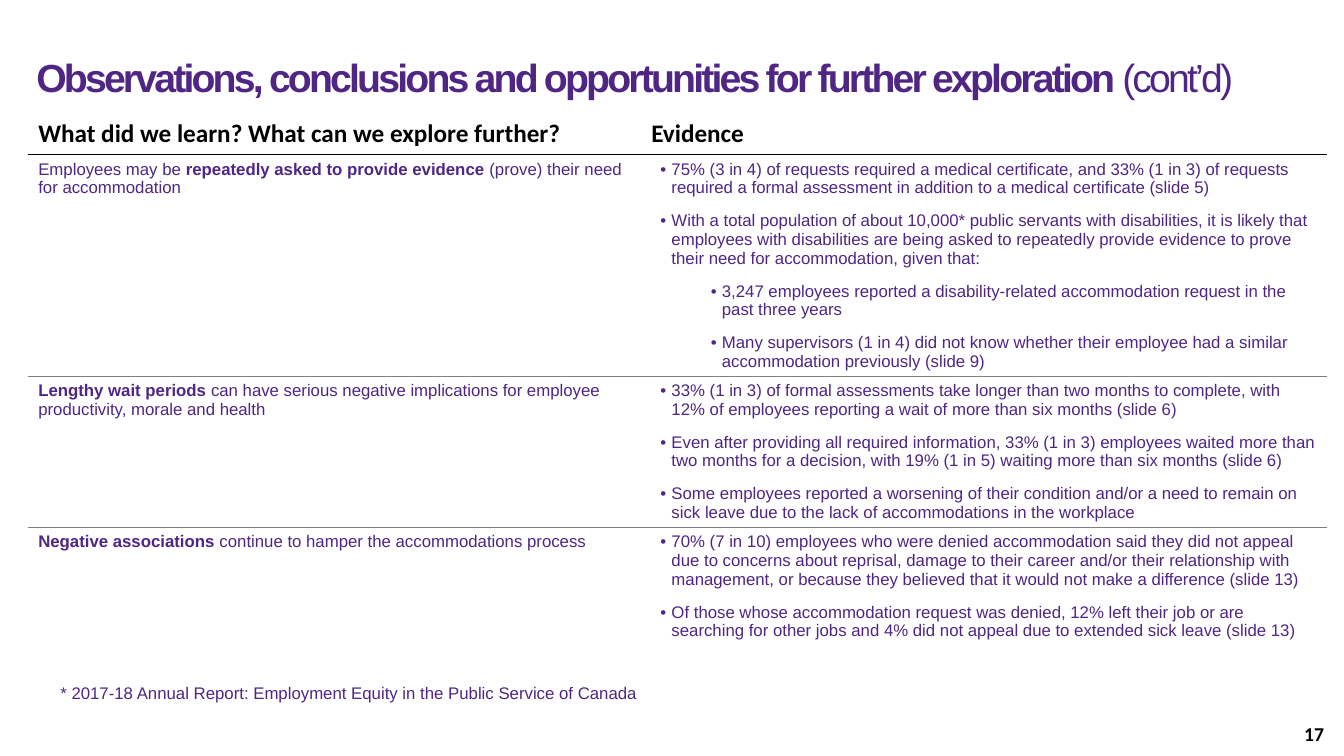
from lxml import etree
from pptx import Presentation
from pptx.dml.color import RGBColor
from pptx.enum.text import MSO_ANCHOR, PP_ALIGN
from pptx.oxml.ns import qn
from pptx.util import Inches, Pt

TOP, MIDDLE = MSO_ANCHOR.TOP, MSO_ANCHOR.MIDDLE
LEFT, RIGHT = PP_ALIGN.LEFT, PP_ALIGN.RIGHT
COLORS = {"purple": "4F2684", "black": "000000", "gray": "808080"}
NO_STYLE = "{2D5ABB26-0587-4C30-8999-92F81FD0307C}"

TITLE = [("Observations, conclusions and opportunities for further exploration ", True), ("(cont’d)", False)]
HEADERS = ["What did we learn? What can we explore further?", "Evidence"]
FINDINGS = [
    (
        [("Employees may be ", False), ("repeatedly asked to provide evidence", True),
         (" (prove) their need for accommodation", False)],
        [
            (0, "75% (3 in 4) of requests required a medical certificate, and 33% (1 in 3) of requests required a formal assessment in addition to a medical certificate (slide 5)"),
            (0, "With a total population of about 10,000* public servants with disabilities, it is likely that employees with disabilities are being asked to repeatedly provide evidence to prove their need for accommodation, given that:"),
            (1, "3,247 employees reported a disability-related accommodation request in the past three years"),
            (1, "Many supervisors (1 in 4) did not know whether their employee had a similar accommodation previously (slide 9)"),
        ],
    ),
    (
        [("Lengthy wait periods ", True),
         ("can have serious negative implications for employee productivity, morale and health", False)],
        [
            (0, "33% (1 in 3) of formal assessments take longer than two months to complete, with 12% of employees reporting a wait of more than six months (slide 6)"),
            (0, "Even after providing all required information, 33% (1 in 3) employees waited more than two months for a decision, with 19% (1 in 5) waiting more than six months (slide 6)"),
            (0, "Some employees reported a worsening of their condition and/or a need to remain on sick leave due to the lack of accommodations in the workplace"),
        ],
    ),
    (
        [("Negative associations", True), (" continue to hamper the accommodations process", False)],
        [
            (0, "70% (7 in 10) employees who were denied accommodation said they did not appeal due to concerns about reprisal, damage to their career and/or their relationship with management, or because they believed that it would not make a difference (slide 13)"),
            (0, "Of those whose accommodation request was denied, 12% left their job or are searching for other jobs and 4% did not appeal due to extended sick leave (slide 13)"),
        ],
    ),
]
FOOTNOTE = "* 2017-18 Annual Report: Employment Equity in the Public Service of Canada"
SLIDE_NUMBER = "17"
COLUMN_WIDTHS = [6.08, 6.8]
ROW_HEIGHTS = [0.4, 2.19, 1.5, 1.44]


def write_runs(paragraph, runs, size=12, font_name="Arial", color="purple"):
    for text, bold in runs:
        run = paragraph.add_run()
        run.text = text
        run.font.name = font_name
        run.font.size = Pt(size)
        run.font.bold = bold
        run.font.color.rgb = RGBColor.from_string(COLORS[color])


def add_bullet(paragraph, level):
    properties = paragraph._p.get_or_add_pPr()
    properties.set("marL", str(Inches(0.2 + 0.5 * level)))
    properties.set("indent", str(Inches(-0.11)))
    etree.SubElement(properties, qn("a:buFont"), typeface="Arial")
    etree.SubElement(properties, qn("a:buChar"), char="•")


def add_border(cell, tag, color):
    line = etree.Element(qn(tag), w=str(Pt(1)))
    fill = etree.SubElement(line, qn("a:solidFill"))
    etree.SubElement(fill, qn("a:srgbClr"), val=COLORS[color])
    cell._tc.get_or_add_tcPr().insert(0, line)


def add_text_box(slide, box, runs, align=LEFT, anchor=TOP, **style):
    text_frame = slide.shapes.add_textbox(*map(Inches, box)).text_frame
    text_frame.word_wrap = True
    text_frame.vertical_anchor = anchor
    paragraph = text_frame.paragraphs[0]
    paragraph.alignment = align
    write_runs(paragraph, runs, **style)


def add_title(slide):
    title = slide.shapes.title
    title.left, title.top, title.width, title.height = map(Inches, (0.36, 0.56, 12.71, 0.46))
    text_frame = title.text_frame
    text_frame.margin_left = text_frame.margin_right = 0
    text_frame.margin_top = text_frame.margin_bottom = Inches(0.02)
    text_frame.vertical_anchor = MIDDLE
    paragraph = text_frame.paragraphs[0]
    paragraph.alignment = LEFT
    paragraph.line_spacing = 0.9
    write_runs(paragraph, TITLE, size=28)
    for run in paragraph.runs:
        run.font._element.set("spc", "-200")


def add_findings_table(slide):
    frame = slide.shapes.add_table(
        len(ROW_HEIGHTS), len(COLUMN_WIDTHS), Inches(0.28), Inches(1.13),
        Inches(sum(COLUMN_WIDTHS)), Inches(sum(ROW_HEIGHTS)))
    table = frame.table
    table.first_row = table.horz_banding = False
    table._tbl.tblPr.find(qn("a:tableStyleId")).text = NO_STYLE
    for column, width in zip(table.columns, COLUMN_WIDTHS):
        column.width = Inches(width)
    for row, height in zip(table.rows, ROW_HEIGHTS):
        row.height = Inches(height)

    for column, header in enumerate(HEADERS):
        write_runs(table.cell(0, column).text_frame.paragraphs[0], [(header, True)],
                   size=18, font_name="Calibri", color="black")
    for row, (finding, evidence) in enumerate(FINDINGS, start=1):
        write_runs(table.cell(row, 0).text_frame.paragraphs[0], finding)
        text_frame = table.cell(row, 1).text_frame
        for index, (level, text) in enumerate(evidence):
            paragraph = text_frame.add_paragraph() if index else text_frame.paragraphs[0]
            paragraph.level = level
            add_bullet(paragraph, level)
            if index:
                paragraph.space_before = Pt(10)
            write_runs(paragraph, [(text, False)])

    last_row = len(ROW_HEIGHTS) - 1
    for row in range(len(ROW_HEIGHTS)):
        for column in range(len(COLUMN_WIDTHS)):
            cell = table.cell(row, column)
            cell.fill.background()
            if row < last_row:
                add_border(cell, "a:lnB", "gray" if row else "black")
            if row > 0:
                add_border(cell, "a:lnT", "gray" if row > 1 else "black")


def main():
    presentation = Presentation()
    presentation.slide_width, presentation.slide_height = Inches(13.33), Inches(7.5)
    slide = presentation.slides.add_slide(presentation.slide_layouts[5])
    add_title(slide)
    add_findings_table(slide)
    add_text_box(slide, (0.5, 6.72, 7.42, 0.3), [(FOOTNOTE, False)])
    add_text_box(slide, (10.23, 7.08, 3, 0.4), [(SLIDE_NUMBER, True)], align=RIGHT,
                 anchor=MIDDLE, size=14, font_name="Calibri", color="black")
    presentation.save("out.pptx")


if __name__ == "__main__":
    main()
